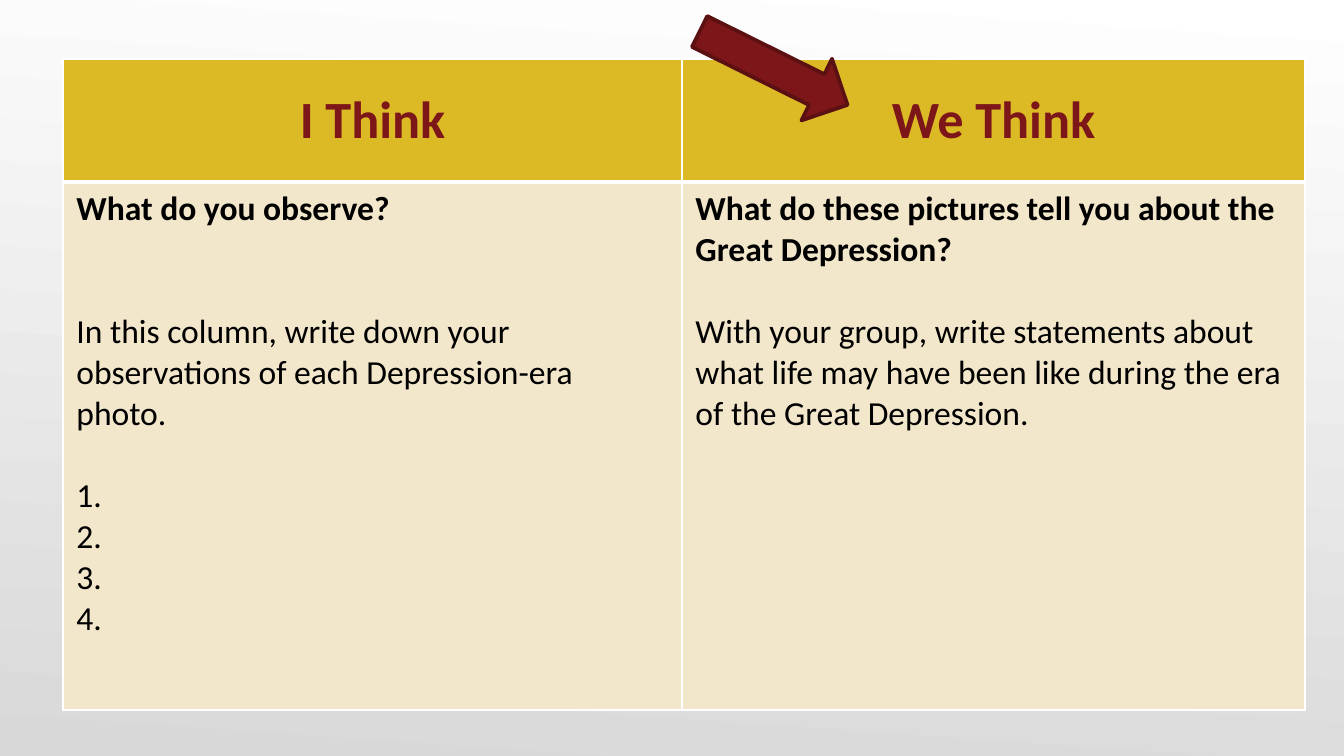
from lxml.etree import SubElement
from pptx import Presentation
from pptx.dml.color import RGBColor
from pptx.enum.shapes import MSO_SHAPE as Shape
from pptx.enum.text import MSO_ANCHOR as Anchor, PP_ALIGN as Align
from pptx.oxml.ns import qn
from pptx.util import Cm, Pt

THEME = {
    "font": "Calibri",
    "heading_size": 28,
    "body_size": 18,
    "line_height": 22,
    "maroon": "7D1619",
    "dark_maroon": "5B1012",
    "gold": "DCBA25",
    "cream": "F2E6CB",
    "black": "000000",
    "border": "FFFFFF",
    "background": ("FFFFFF", "D8D8D8"),
}

# Each body paragraph: text, bold, empty lines above it
COLUMNS = [
    {
        "heading": "I Think",
        "width": 11.7,
        "body": [
            ("What do you observe?", True, 0),
            ("In this column, write down your observations of each "
             "Depression-era photo.", False, 2),
            ("1.", False, 1),
            ("2.", False, 0),
            ("3.", False, 0),
            ("4.", False, 0),
        ],
    },
    {
        "heading": "We Think",
        "width": 11.77,
        "body": [
            ("What do these pictures tell you about the Great Depression?", True, 0),
            ("With your group, write statements about what life may have been "
             "like during the era of the Great Depression.", False, 1),
        ],
    },
]
ROW_HEIGHTS = (2.32, 9.98)
TABLE_LEFT, TABLE_TOP = 1.19, 1.12


def color(name):
    return RGBColor.from_string(THEME[name])


def paint_background(slide):
    fill = slide.background.fill
    fill.gradient()
    fill.gradient_angle = 266
    for stop, shade in zip(fill.gradient_stops, THEME["background"]):
        stop.color.rgb = RGBColor.from_string(shade)


def set_borders(cell, top, bottom):
    """Draw the cell's borders; top and bottom are widths in points."""
    properties = cell._tc.get_or_add_tcPr()
    for side, width in (("L", 1), ("R", 1), ("T", top), ("B", bottom)):
        line = SubElement(properties, qn(f"a:ln{side}"), w=str(Pt(width)))
        solid = SubElement(line, qn("a:solidFill"))
        SubElement(solid, qn("a:srgbClr"), val=THEME["border"])


def set_font(paragraph, size, color_name, bold):
    font = paragraph.font
    font.name = THEME["font"]
    font.size = Pt(THEME[size])
    font.color.rgb = color(color_name)
    font.bold = bold


def fill_cell(cell, color_name):
    cell.fill.solid()
    cell.fill.fore_color.rgb = color(color_name)


def write_heading(cell, text):
    set_borders(cell, top=1, bottom=3)
    fill_cell(cell, "gold")
    cell.vertical_anchor = Anchor.MIDDLE
    paragraph = cell.text_frame.paragraphs[0]
    paragraph.text = text
    paragraph.alignment = Align.CENTER
    set_font(paragraph, "heading_size", "maroon", True)


def write_body(cell, body):
    set_borders(cell, top=3, bottom=1)
    fill_cell(cell, "cream")
    frame = cell.text_frame
    for index, (text, bold, gap) in enumerate(body):
        paragraph = frame.add_paragraph() if index else frame.paragraphs[0]
        paragraph.text = text
        if gap:
            paragraph.space_before = Pt(gap * THEME["line_height"])
        set_font(paragraph, "body_size", "black", bold)


def add_think_table(slide):
    width = sum(column["width"] for column in COLUMNS)
    table = slide.shapes.add_table(
        len(ROW_HEIGHTS), len(COLUMNS), Cm(TABLE_LEFT), Cm(TABLE_TOP),
        Cm(width), Cm(sum(ROW_HEIGHTS))).table
    table.horz_banding = False
    for row, height in zip(table.rows, ROW_HEIGHTS):
        row.height = Cm(height)
    for index, column in enumerate(COLUMNS):
        table.columns[index].width = Cm(column["width"])
        write_heading(table.cell(0, index), column["heading"])
        write_body(table.cell(1, index), column["body"])


def add_pointer(slide):
    arrow = slide.shapes.add_shape(
        Shape.RIGHT_ARROW, Cm(13.06), Cm(0.64), Cm(3.12), Cm(1.3))
    arrow.rotation = 26.4
    arrow.shadow.inherit = False
    arrow.fill.solid()
    arrow.fill.fore_color.rgb = color("maroon")
    arrow.line.color.rgb = color("dark_maroon")
    arrow.line.width = Pt(2)


def main():
    presentation = Presentation()
    presentation.slide_width, presentation.slide_height = Cm(25.4), Cm(14.29)
    slide = presentation.slides.add_slide(presentation.slide_layouts[6])
    paint_background(slide)
    add_think_table(slide)
    add_pointer(slide)
    presentation.save("out.pptx")


if __name__ == "__main__":
    main()
